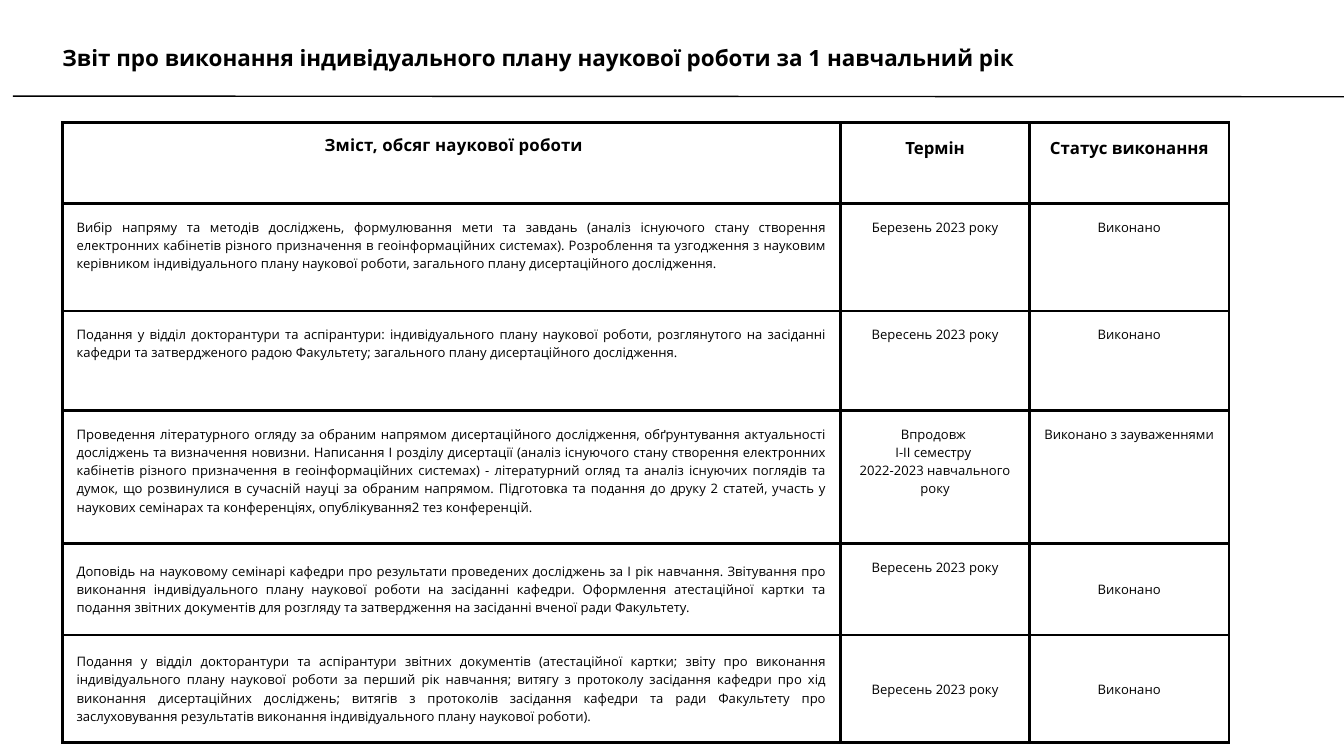
from lxml import etree
from pptx import Presentation
from pptx.dml.color import RGBColor
from pptx.enum.shapes import MSO_CONNECTOR
from pptx.enum.text import MSO_ANCHOR, MSO_AUTO_SIZE, PP_ALIGN
from pptx.oxml.ns import qn
from pptx.util import Inches, Pt

STRAIGHT = MSO_CONNECTOR.STRAIGHT
TOP, MIDDLE = MSO_ANCHOR.TOP, MSO_ANCHOR.MIDDLE
LEFT, CENTER, JUSTIFY = PP_ALIGN.LEFT, PP_ALIGN.CENTER, PP_ALIGN.JUSTIFY

THEME = {
    "font": "Open Sans", "ink": "000000",
    "title": 24, "header": 18, "body": 14,
    "rule": 1.5, "border": 3,
}
INK = RGBColor.from_string(THEME["ink"])

# Grid in inches
SLIDE_W, SLIDE_H = 20, 11.25
MARGIN = 0.93
TABLE_TOP = 1.82
COLUMNS = [11.58, 2.81, 2.97]
ROWS = [1.21, 1.6, 1.48, 1.98, 1.36, 1.6]
PADDING = 0.21

# Each row: work, term, status and the vertical anchor of each
PLAN = [
    ("Вибір напряму та методів досліджень, формулювання мети та завдань (аналіз існуючого стану створення "
     "електронних кабінетів різного призначення в геоінформаційних системах). Розроблення та узгодження з "
     "науковим керівником індивідуального плану наукової роботи, загального плану дисертаційного дослідження.",
     "Березень 2023 року", "Виконано", (TOP, TOP, TOP)),
    ("Подання у відділ докторантури та аспірантури: індивідуального плану наукової роботи, розглянутого на "
     "засіданні кафедри та затвердженого радою Факультету; загального плану дисертаційного дослідження.",
     "Вересень 2023 року", "Виконано", (TOP, TOP, TOP)),
    ("Проведення літературного огляду за обраним напрямом дисертаційного дослідження, обґрунтування "
     "актуальності досліджень та визначення новизни. Написання І розділу дисертації (аналіз існуючого стану "
     "створення електронних кабінетів різного призначення в геоінформаційних системах) - літературний огляд "
     "та аналіз існуючих поглядів та думок, що розвинулися в сучасній науці за обраним напрямом. Підготовка "
     "та подання до друку 2 статей, участь у наукових семінарах та конференціях, опублікування2 тез "
     "конференцій.",
     "Впродовж \nІ-ІІ семестру \n2022-2023 навчального року", "Виконано з зауваженнями", (TOP, TOP, TOP)),
    ("Доповідь на науковому семінарі кафедри про результати проведених досліджень за І рік навчання. "
     "Звітування про виконання індивідуального плану наукової роботи на засіданні кафедри. Оформлення "
     "атестаційної картки та подання звітних документів для розгляду та затвердження на засіданні вченої "
     "ради Факультету.",
     "Вересень 2023 року", "Виконано", (MIDDLE, TOP, MIDDLE)),
    ("Подання у відділ докторантури та аспірантури звітних документів (атестаційної картки; звіту про "
     "виконання індивідуального плану наукової роботи за перший рік навчання; витягу з протоколу засідання "
     "кафедри про хід виконання дисертаційних досліджень; витягів з протоколів засідання кафедри та ради "
     "Факультету про заслуховування результатів виконання індивідуального плану наукової роботи).",
     "Вересень 2023 року", "Виконано", (MIDDLE, MIDDLE, MIDDLE)),
]
HEADERS = [(" Зміст, обсяг наукової роботи", 22), ("Термін", 25.2), ("Статус виконання", 25.2)]


def write(frame, text, size, leading, align, bold=False):
    frame.word_wrap = True
    for number, line in enumerate(text.split("\n")):
        paragraph = frame.add_paragraph() if number else frame.paragraphs[0]
        paragraph.alignment = align
        paragraph.line_spacing = Pt(leading)
        run = paragraph.add_run()
        run.text = line
        run.font.name = THEME["font"]
        run.font.size = Pt(size)
        run.font.bold = bold
        run.font.color.rgb = INK


def frame_cell(cell, anchor):
    cell.margin_left = cell.margin_right = Inches(PADDING)
    cell.margin_top = cell.margin_bottom = Inches(PADDING)
    cell.vertical_anchor = anchor
    properties = cell._tc.get_or_add_tcPr()
    for side in ("a:lnL", "a:lnR", "a:lnT", "a:lnB"):
        border = etree.SubElement(properties, qn(side), w=str(Pt(THEME["border"])))
        fill = etree.SubElement(border, qn("a:solidFill"))
        etree.SubElement(fill, qn("a:srgbClr"), val=THEME["ink"])
    cell.fill.background()


presentation = Presentation()
presentation.slide_width = Inches(SLIDE_W)
presentation.slide_height = Inches(SLIDE_H)
slide = presentation.slides.add_slide(presentation.slide_layouts[6])

# Rule under the title
rule = slide.shapes.add_connector(
    STRAIGHT, Inches(SLIDE_W), Inches(1.44), Inches(0.19), Inches(1.43))
rule.line.color.rgb = INK
rule.line.width = Pt(THEME["rule"])
etree.SubElement(rule._element.spPr, qn("a:effectLst"))

# Plan table
plan = slide.shapes.add_table(
    len(ROWS), len(COLUMNS), Inches(MARGIN), Inches(TABLE_TOP),
    Inches(sum(COLUMNS)), Inches(sum(ROWS))).table
plan.first_row = plan.horz_banding = False
for column, width in zip(plan.columns, COLUMNS):
    column.width = Inches(width)
for row, height in zip(plan.rows, ROWS):
    row.height = Inches(height)

# Header row
for column, (heading, leading) in enumerate(HEADERS):
    cell = plan.cell(0, column)
    frame_cell(cell, TOP)
    write(cell.text_frame, heading, THEME["header"], leading, CENTER, bold=True)
plan.cell(0, 0).text_frame.paragraphs[0].runs[0].font._element.set("spc", "20")

# Work, term and status rows
for row, (*entries, anchors) in enumerate(PLAN, start=1):
    for column, (entry, anchor) in enumerate(zip(entries, anchors)):
        cell = plan.cell(row, column)
        frame_cell(cell, anchor)
        write(cell.text_frame, entry, THEME["body"], 19.6, CENTER if column else JUSTIFY)

# Title
title = slide.shapes.add_textbox(
    Inches(MARGIN), Inches(0.75), Inches(14.38), Inches(0.31)).text_frame
title.margin_left = title.margin_right = title.margin_top = title.margin_bottom = 0
title.auto_size = MSO_AUTO_SIZE.SHAPE_TO_FIT_TEXT
write(title, "Звіт про виконання індивідуального плану наукової роботи за 1 навчальний рік",
      THEME["title"], 21.6, LEFT, bold=True)

presentation.save("out.pptx")
